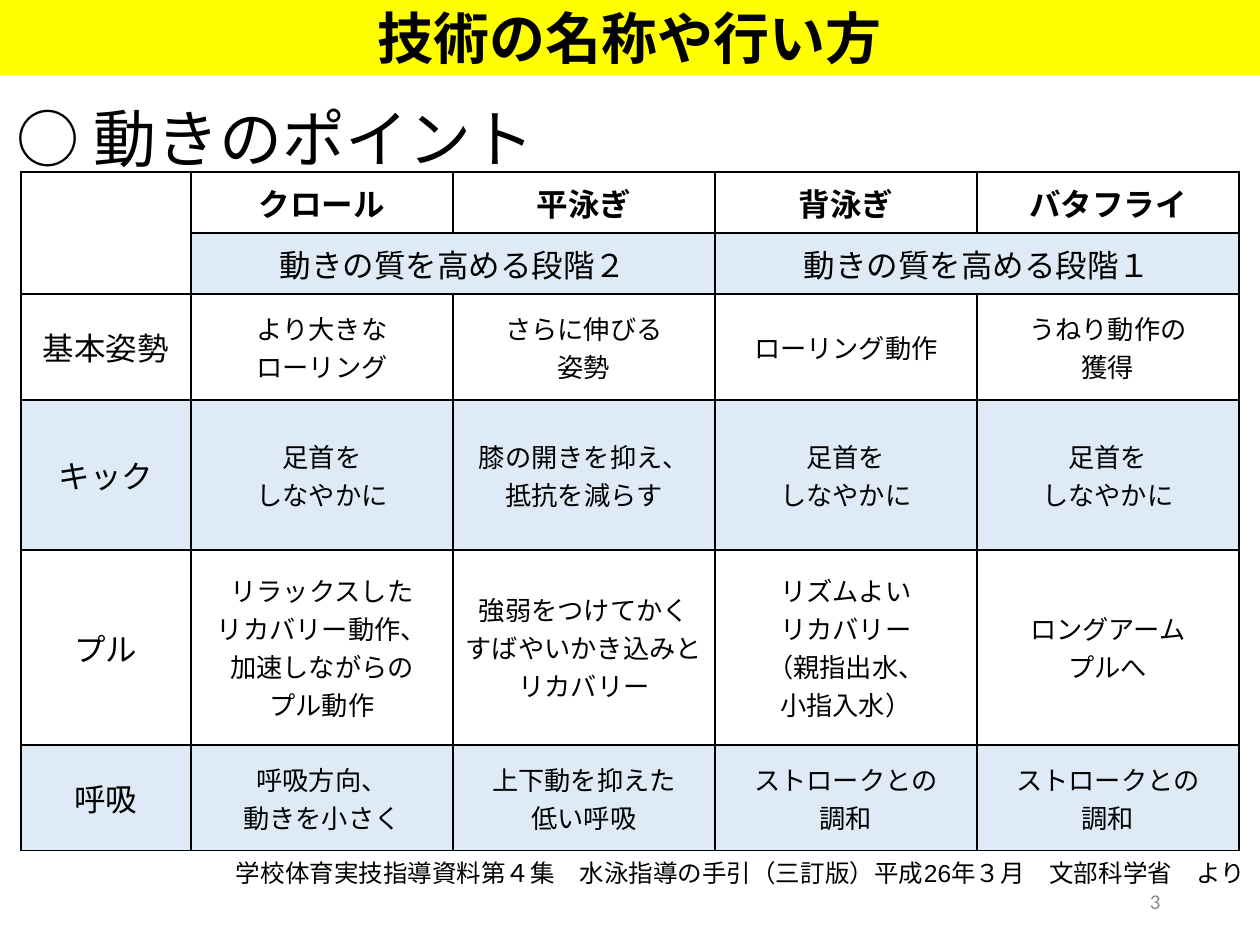
from lxml import etree
from pptx import Presentation
from pptx import util as u
from pptx.dml.color import RGBColor
from pptx.enum import lang, shapes, text
from pptx.oxml.ns import qn

SCALE = 914400 // 126
COLORS = {"black": "000000", "yellow": "FFFF00", "band": "DEEBF7", "white": "FFFFFF", "gray": "8C8C8C"}

BANNER = "技術の名称や行い方"
TITLE = "○ 動きのポイント"
STROKES = ["", "クロール", "平泳ぎ", "背泳ぎ", "バタフライ"]
STAGES = ["", "動きの質を高める段階２", "", "動きの質を高める段階１", ""]
POINTS = [
    ["基本姿勢", "より大きな\nローリング", "さらに伸びる\n姿勢", "ローリング動作", "うねり動作の\n獲得"],
    ["キック", "足首を\nしなやかに", "膝の開きを抑え、\n抵抗を減らす", "足首を\nしなやかに", "足首を\nしなやかに"],
    ["プル", "リラックスした\nリカバリー動作、\n加速しながらの\nプル動作",
     "強弱をつけてかく\nすばやいかき込みと\nリカバリー",
     "リズムよい\nリカバリー\n（親指出水、\n小指入水）", "ロングアーム\nプルへ"],
    ["呼吸", "呼吸方向、\n動きを小さく", "上下動を抑えた\n低い呼吸", "ストロークとの\n調和", "ストロークとの\n調和"],
]
SOURCE = [("学校体育実技指導資料第４集　水泳指導の手引（三訂版）平成", "Roboto"), ("26", "Arial"),
          ("年３月　文部科学省　より", "Roboto")]
PAGE = "3"

ROWS = [STROKES, STAGES, *POINTS]
COL_WIDTHS = [170] + [262] * 4
ROW_HEIGHTS = [61, 61, 106, 150, 195, 106]
MERGES = [((0, 0), (1, 0)), ((1, 1), (1, 2)), ((1, 3), (1, 4))]


def px(*values):
    return [v * SCALE for v in values]


def rgb(name):
    return RGBColor.from_string(COLORS[name])


def add_run(p, words, size, font="Calibri", color="black", bold=False):
    r = p.add_run()
    r.text = words
    fmt = {"size": u.Pt(size), "name": font, "bold": bold, "language_id": lang.MSO_LANGUAGE_ID.JAPANESE}
    for key, value in fmt.items():
        setattr(r.font, key, value)
    r.font.color.rgb = rgb(color)


def format_frame(tf, **fmt):
    for key, value in fmt.items():
        setattr(tf, key, value)


def add_borders(cell):
    tc_pr = cell._tc.get_or_add_tcPr()
    for i, side in enumerate(("lnL", "lnR", "lnT", "lnB")):
        ln = etree.Element(qn(f"a:{side}"), w=str(u.Pt(1)))
        fill = etree.SubElement(ln, qn("a:solidFill"))
        etree.SubElement(fill, qn("a:srgbClr"), val=COLORS["black"])
        tc_pr.insert(i, ln)


def add_points_table(s):
    tbl = s.shapes.add_table(len(ROWS), len(COL_WIDTHS),
                             *px(21, 172, sum(COL_WIDTHS), sum(ROW_HEIGHTS))).table
    for col, w in zip(tbl.columns, COL_WIDTHS):
        col.width = w * SCALE
    for row, h in zip(tbl.rows, ROW_HEIGHTS):
        row.height = h * SCALE
    for first, last in MERGES:
        tbl.cell(*first).merge(tbl.cell(*last))
    for i, row in enumerate(ROWS):
        for j, words in enumerate(row):
            cell = tbl.cell(i, j)
            cell.vertical_anchor = text.MSO_ANCHOR.MIDDLE
            cell.fill.solid()
            cell.fill.fore_color.rgb = rgb("band" if i % 2 and (i > 1 or j) else "white")
            add_borders(cell)
            if not words:
                continue
            for k, line in enumerate(words.split("\n")):
                tf = cell.text_frame
                p = tf.add_paragraph() if k else tf.paragraphs[0]
                p.alignment = text.PP_ALIGN.CENTER
                add_run(p, line, 15 if i > 1 and j else 18, bold=i == 0)


def main():
    prs = Presentation()
    prs.slide_width, prs.slide_height = px(1260, 945)
    s = prs.slides.add_slide(prs.slide_layouts[5])

    title = s.shapes.title
    title.left, title.top, title.width, title.height = px(4, 101, 548, 82)
    format_frame(title.text_frame, word_wrap=False, vertical_anchor=text.MSO_ANCHOR.MIDDLE)
    p = title.text_frame.paragraphs[0]
    p.alignment, p.line_spacing = text.PP_ALIGN.LEFT, 0.9
    add_run(p, TITLE, 36)

    add_points_table(s)

    number = s.shapes.add_textbox(*px(890, 876, 283, 50))
    format_frame(number.text_frame, word_wrap=True, vertical_anchor=text.MSO_ANCHOR.MIDDLE)
    p = number.text_frame.paragraphs[0]
    p.alignment = text.PP_ALIGN.RIGHT
    add_run(p, PAGE, 12, color="gray")

    banner = s.shapes.add_shape(shapes.MSO_SHAPE.RECTANGLE, *px(0, 0, 1260, 74))
    banner.shadow.inherit = False
    banner.fill.solid()
    banner.fill.fore_color.rgb = banner.line.color.rgb = rgb("yellow")
    banner.line.width = u.Pt(1)
    banner.text_frame.vertical_anchor = text.MSO_ANCHOR.MIDDLE
    p = banner.text_frame.paragraphs[0]
    p.alignment = text.PP_ALIGN.CENTER
    add_run(p, BANNER, 32, bold=True)

    source = s.shapes.add_textbox(*px(236, 858, 1014, 30))
    format_frame(source.text_frame, word_wrap=True, margin_left=0, margin_top=0, margin_right=0, margin_bottom=0)
    for words, font in SOURCE:
        add_run(source.text_frame.paragraphs[0], words, 14, font)

    prs.save("out.pptx")


if __name__ == "__main__":
    main()
